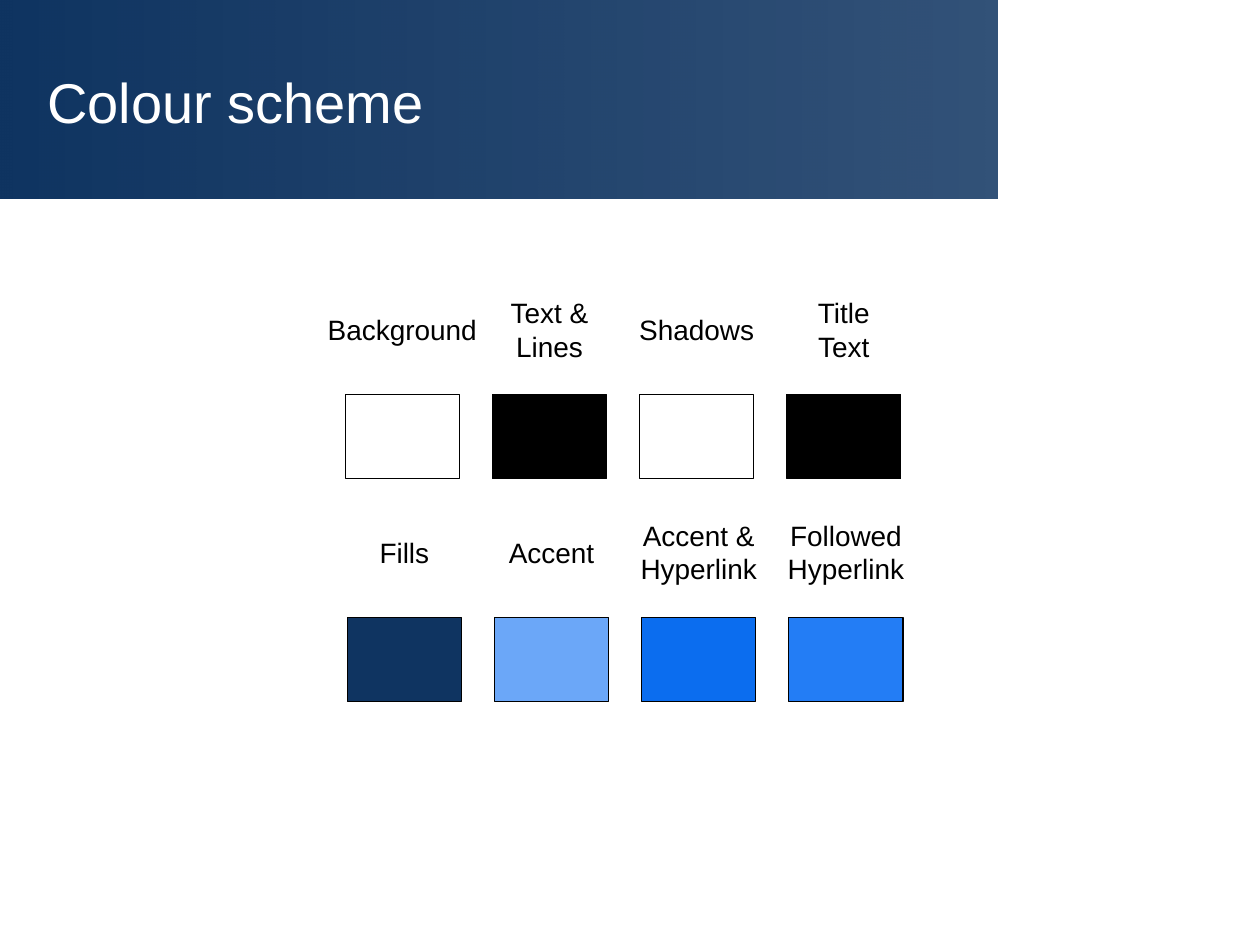
from dataclasses import dataclass

from pptx import Presentation
from pptx.dml.color import RGBColor as Rgb
from pptx.enum.shapes import MSO_SHAPE as Shape
from pptx.enum.text import MSO_ANCHOR as Anchor, MSO_AUTO_SIZE as AutoSize, PP_ALIGN as Align
from pptx.oxml.ns import qn
from pptx.oxml.xmlchemy import OxmlElement
from pptx.slide import Slide
from pptx.text.text import _Paragraph as Paragraph
from pptx.util import Pt


@dataclass(frozen=True)
class Theme:
    font: str = "Arial"
    title_size: float = 32
    label_size: float = 16
    navy: str = "0F3461"
    white: str = "FFFFFF"
    black: str = "000000"
    light_blue: str = "6BA7F8"
    blue: str = "0B6DEF"
    bright_blue: str = "237DF5"


@dataclass(frozen=True)
class Swatch:
    lines: tuple[str, ...]
    label_width: float
    colour: str


@dataclass(frozen=True)
class SwatchRow:
    left: float
    top: float
    swatches: tuple[Swatch, ...]


THEME = Theme()
SWATCH_WIDTH, SWATCH_HEIGHT = 65.2, 48.24
PITCH = 84.1
LABEL_CENTRE_RISE = 37  # from swatch top up to the middle of its label
LINE_HEIGHT, LABEL_PADDING = 19.4, 7.2

ROWS = (
    SwatchRow(197.3, 225.4, (
        Swatch(("Background",), 100, THEME.white),
        Swatch(("Text &", "Lines"), 60.5, THEME.black),
        Swatch(("Shadows",), 80, THEME.white),
        Swatch(("Title", "Text"), 45.4, THEME.black),
    )),
    SwatchRow(198.5, 352.7, (
        Swatch(("Fills",), 42.5, THEME.navy),
        Swatch(("Accent",), 63.4, THEME.light_blue),
        Swatch(("Accent &", "Hyperlink"), 80.6, THEME.blue),
        Swatch(("Followed", "Hyperlink"), 80.6, THEME.bright_blue),
    )),
)


def add_span(para: Paragraph, text: str, size: float, colour: str) -> None:
    span = para.add_run()
    span.text = text
    span.font.name = THEME.font
    span.font.size = Pt(size)
    span.font.color.rgb = Rgb.from_string(colour)


def add_title_band(page: Slide) -> None:
    """Draw a navy band that turns slightly transparent to the right."""
    band = page.shapes.add_shape(Shape.RECTANGLE, 0, 0, Pt(570), Pt(113.3))
    band.shadow.inherit = False
    band.line.fill.background()
    band.fill.gradient()
    band.fill.gradient_angle = 0
    for stop, position in zip(band.fill.gradient_stops, (0, 1)):
        stop.position = position
        stop.color.rgb = Rgb.from_string(THEME.navy)
    alpha = OxmlElement("a:alpha")
    alpha.set("val", "85000")
    list(band.element.spPr.iter(qn("a:srgbClr")))[-1].append(alpha)


def add_title(page: Slide, text: str) -> None:
    box = page.shapes.add_textbox(Pt(19.8), Pt(21.6), Pt(538.6), Pt(72.7))
    frame = box.text_frame
    frame.word_wrap = True
    frame.vertical_anchor = Anchor.MIDDLE
    add_span(frame.paragraphs[0], text, THEME.title_size, THEME.white)


def add_swatch(page: Slide, swatch: Swatch, left: float, top: float) -> None:
    box = page.shapes.add_shape(
        Shape.RECTANGLE, Pt(left), Pt(top), Pt(SWATCH_WIDTH), Pt(SWATCH_HEIGHT))
    box.shadow.inherit = False
    box.fill.solid()
    box.fill.fore_color.rgb = Rgb.from_string(swatch.colour)
    box.line.color.rgb = Rgb.from_string(THEME.black)
    box.line.width = Pt(0.75)


def add_label(page: Slide, swatch: Swatch, centre: float, middle: float) -> None:
    height = LINE_HEIGHT * len(swatch.lines) + LABEL_PADDING
    box = page.shapes.add_textbox(
        Pt(centre - swatch.label_width / 2), Pt(middle - height / 2),
        Pt(swatch.label_width), Pt(height))
    frame = box.text_frame
    frame.word_wrap = False
    frame.auto_size = AutoSize.SHAPE_TO_FIT_TEXT
    frame.margin_left = frame.margin_right = 0
    for index, line in enumerate(swatch.lines):
        para = frame.add_paragraph() if index else frame.paragraphs[0]
        para.alignment = Align.CENTER
        add_span(para, line, THEME.label_size, THEME.black)


def main() -> None:
    deck = Presentation()
    deck.slide_width, deck.slide_height = Pt(720), Pt(540)
    page = deck.slides.add_slide(deck.slide_layouts[6])
    page.background.fill.solid()
    page.background.fill.fore_color.rgb = Rgb.from_string(THEME.white)
    add_title_band(page)
    add_title(page, "Colour scheme")
    for row in ROWS:
        for column, swatch in enumerate(row.swatches):
            left = row.left + column * PITCH
            add_swatch(page, swatch, left, row.top)
            add_label(page, swatch, left + SWATCH_WIDTH / 2, row.top - LABEL_CENTRE_RISE)
    deck.save("out.pptx")


if __name__ == "__main__":
    main()
